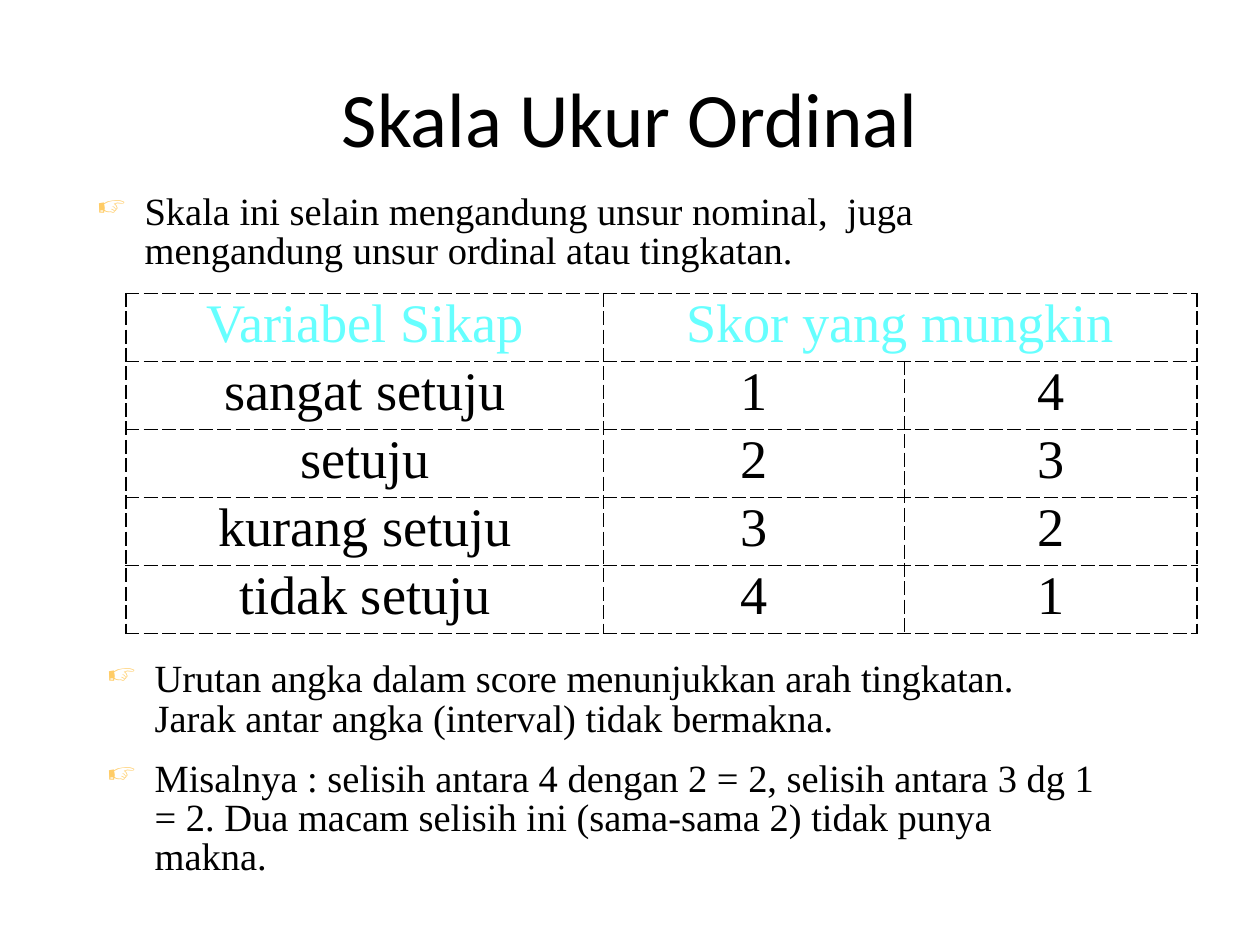
from dataclasses import dataclass

import pptx
import pptx.dml.color
import pptx.enum.text
import pptx.oxml
import pptx.oxml.ns
import pptx.util
from pptx.util import Inches


@dataclass(frozen=True)
class Theme:
    ink: str = "000000"
    header: str = "66FFFF"
    bullet: str = "FFCC66"
    title_font: str = "Calibri"
    body_font: str = "Times New Roman"
    title_size: int = 44
    body_size: int = 22
    table_size: int = 31
    line_spacing: float = 0.85


@dataclass(frozen=True)
class BulletBox:
    left: float
    top: float
    width: float
    height: float
    points: tuple[str, ...]


THEME = Theme()
CENTER = pptx.enum.text.PP_ALIGN.CENTER
MIDDLE = pptx.enum.text.MSO_ANCHOR.MIDDLE

BULLET_BOXES = (
    BulletBox(0.67, 1.49, 8.27, 0.76, (
        "Skala ini selain mengandung unsur nominal,  juga mengandung unsur ordinal atau tingkatan.",
    )),
    BulletBox(0.75, 5.2, 8.04, 1.89, (
        "Urutan angka dalam score menunjukkan arah tingkatan. "
        "Jarak antar angka (interval) tidak bermakna.",
        "Misalnya : selisih antara 4 dengan 2 = 2, selisih antara 3 dg 1 = 2. "
        "Dua macam selisih ini (sama-sama 2) tidak punya makna.",
    )),
)
HEADERS = ("Variabel Sikap", "Skor yang mungkin")
ATTITUDES = ("sangat setuju", "setuju", "kurang setuju", "tidak setuju")
COLUMN_WIDTHS = (3.79, 2.39, 2.32)
ROW_HEIGHT = 0.5


def add_span(para, text: str, font: str, size: int, color: str) -> None:
    span = para.add_run()
    span.text = text
    span.font.name = font
    span.font.size = pptx.util.Pt(size)
    span.font.bold = False
    span.font.color.rgb = pptx.dml.color.RGBColor.from_string(color)


def add_xml(parent, xml: str) -> None:
    """Append one DrawingML element, given without its namespace declaration."""
    declaration = pptx.oxml.ns.nsdecls("a")
    name, rest = xml.split(" ", 1)
    parent.append(pptx.oxml.parse_xml(f"{name} {declaration} {rest}"))


def add_text_box(page, left: float, top: float, width: float, height: float):
    box = page.shapes.add_textbox(Inches(left), Inches(top), Inches(width), Inches(height))
    box.text_frame.word_wrap = True
    return box.text_frame


def add_title(page, text: str) -> None:
    frame = add_text_box(page, 0.5, 0.3, 9, 1.25)
    frame.vertical_anchor = MIDDLE
    para = frame.paragraphs[0]
    para.alignment = CENTER
    add_span(para, text, THEME.title_font, THEME.title_size, THEME.ink)


def add_bullets(page, item: BulletBox) -> None:
    frame = add_text_box(page, item.left, item.top, item.width, item.height)
    for index, point in enumerate(item.points):
        para = frame.add_paragraph() if index else frame.paragraphs[0]
        para.line_spacing = THEME.line_spacing
        para.space_before = pptx.util.Pt(12 if index else 0)
        properties = para._p.get_or_add_pPr()
        properties.set("marL", str(Inches(0.38)))
        properties.set("indent", str(Inches(-0.38)))
        add_xml(properties, f'<a:buClr ><a:srgbClr val="{THEME.bullet}"/></a:buClr>')
        add_xml(properties, '<a:buSzPct val="75000"/>')
        add_xml(properties, '<a:buChar char="☞"/>')
        add_span(para, point, THEME.body_font, THEME.body_size, THEME.ink)


def style_cell(cell) -> None:
    """Give the cell dashed borders and no fill."""
    properties = cell._tc.get_or_add_tcPr()
    for side in "LRTB":
        add_xml(
            properties,
            f'<a:ln{side} w="{pptx.util.Pt(1)}"><a:solidFill><a:srgbClr val="{THEME.ink}"/>'
            f'</a:solidFill><a:prstDash val="dash"/></a:ln{side}>',
        )
    cell.fill.background()
    cell.vertical_anchor = MIDDLE


def write_cell(cell, text: str, color: str) -> None:
    para = cell.text_frame.paragraphs[0]
    para.alignment = CENTER
    para.line_spacing = THEME.line_spacing
    add_span(para, text, THEME.body_font, THEME.table_size, color)


def add_score_table(page) -> None:
    count = len(ATTITUDES)
    rows = count + 1
    table = page.shapes.add_table(
        rows, len(COLUMN_WIDTHS), Inches(1), Inches(2.33),
        Inches(sum(COLUMN_WIDTHS)), Inches(rows * ROW_HEIGHT),
    ).table
    table.first_row = table.horz_banding = False
    for column, width in zip(table.columns, COLUMN_WIDTHS):
        column.width = Inches(width)
    for cell in table.iter_cells():
        style_cell(cell)
    table.cell(0, 1).merge(table.cell(0, 2))
    for column, header in enumerate(HEADERS):
        write_cell(table.cell(0, column), header, THEME.header)
    for row, attitude in enumerate(ATTITUDES, start=1):
        for column, text in enumerate((attitude, str(row), str(rows - row))):
            write_cell(table.cell(row, column), text, THEME.ink)


def main() -> None:
    deck = pptx.Presentation()
    deck.slide_width, deck.slide_height = Inches(10), Inches(7.5)
    page = deck.slides.add_slide(deck.slide_layouts[6])
    opening, closing = BULLET_BOXES
    add_bullets(page, opening)
    add_score_table(page)
    add_bullets(page, closing)
    add_title(page, "Skala Ukur Ordinal")
    deck.save("out.pptx")


if __name__ == "__main__":
    main()
